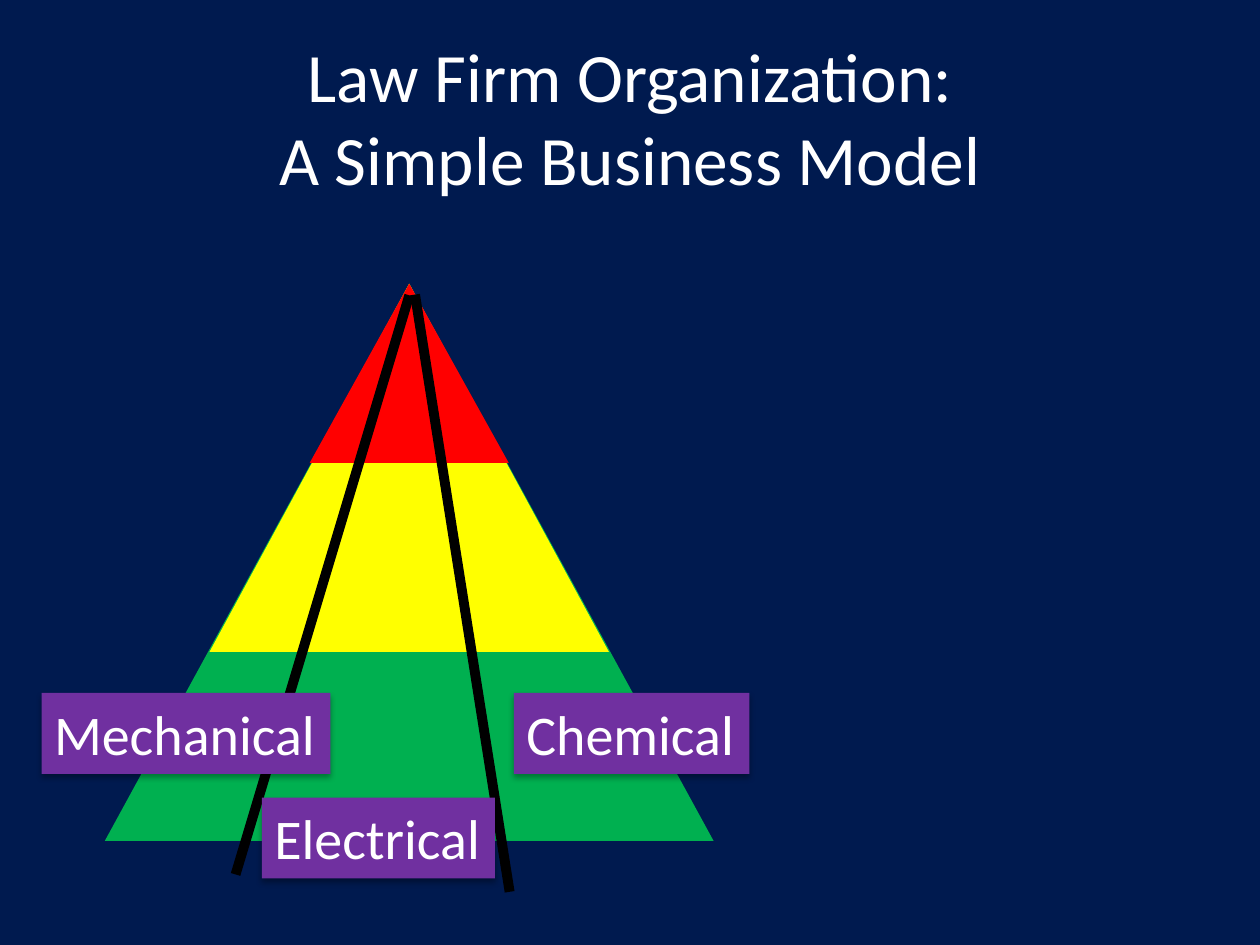
from lxml.etree import SubElement
from pptx import Presentation
from pptx.dml.color import RGBColor
from pptx.enum.shapes import MSO_SHAPE
from pptx.enum.text import MSO_ANCHOR, MSO_AUTO_SIZE, PP_ALIGN
from pptx.oxml.ns import qn
from pptx.util import Cm, Pt

COLORS = {
    "navy": "001A4F", "white": "FFFFFF", "black": "000000",
    "green": "00B050", "yellow": "FFFF00", "red": "FF0000", "purple": "7030A0",
}


def rgb(name):
    return RGBColor.from_string(COLORS[name])


class SlideBuilder:
    font = "Calibri"

    def __init__(self, prs):
        self.s = prs.slides.add_slide(prs.slide_layouts[5])
        fill = self.s.background.fill
        fill.solid()
        fill.fore_color.rgb = rgb("navy")

    def run(self, p, text, size):
        r = p.add_run()
        r.text = text
        r.font.name = self.font
        r.font.size = Pt(size)
        r.font.color.rgb = rgb("white")

    def title(self, lines, x, y, w, h):
        sp = self.s.shapes.title
        sp.left, sp.top, sp.width, sp.height = Cm(x), Cm(y), Cm(w), Cm(h)
        tf = sp.text_frame
        tf.auto_size = MSO_AUTO_SIZE.NONE
        tf.vertical_anchor = MSO_ANCHOR.MIDDLE
        p = tf.paragraphs[0]
        p.alignment = PP_ALIGN.CENTER
        for i, line in enumerate(lines):
            if i:
                p.add_line_break()
            self.run(p, line, 39.6)

    def shape(self, kind, x, y, w, h, color):
        sp = self.s.shapes.add_shape(kind, Cm(x), Cm(y), Cm(w), Cm(h))
        sp.shadow.inherit = False
        sp.fill.solid()
        sp.fill.fore_color.rgb = rgb(color)
        sp.line.fill.background()
        return sp

    def tier(self, apex_x, top, w, h, color):
        self.shape(MSO_SHAPE.ISOSCELES_TRIANGLE, apex_x - w / 2, top, w, h, color)

    def divider(self, center_x, center_y, angle, length=12.19, thickness=0.2):
        sp = self.shape(MSO_SHAPE.RECTANGLE, center_x - length / 2,
                        center_y - thickness / 2, length, thickness, "black")
        sp.rotation = angle

    def label(self, text, x, y, w, h=1.63):
        sp = self.shape(MSO_SHAPE.RECTANGLE, x, y, w, h, "purple")
        self.drop_shadow(sp)
        tf = sp.text_frame
        tf.word_wrap = False
        tf.auto_size = MSO_AUTO_SIZE.SHAPE_TO_FIT_TEXT
        tf.vertical_anchor = MSO_ANCHOR.TOP
        p = tf.paragraphs[0]
        p.alignment = PP_ALIGN.LEFT
        self.run(p, text, 32)

    def drop_shadow(self, sp):
        effects = sp._element.spPr.find(qn("a:effectLst"))
        shadow = SubElement(effects, qn("a:outerShdw"), blurRad=str(Pt(3.5)),
                            dist=str(Pt(2.2)), dir="5400000", rotWithShape="0")
        color = SubElement(shadow, qn("a:srgbClr"), val=COLORS["black"])
        SubElement(color, qn("a:alpha"), val="32000")


def main():
    prs = Presentation()
    prs.slide_width, prs.slide_height = Cm(25.4), Cm(19.05)
    b = SlideBuilder(prs)

    # Title
    b.title(["Law Firm Organization:", "A Simple Business Model"], 1.27, 0.76, 22.86, 3.18)

    # Pyramid: nested triangles sharing one apex
    for w, h, color in [(12.27, 11.23, "green"), (8.05, 7.42, "yellow"), (4.01, 3.61, "red")]:
        b.tier(8.25, 5.72, w, h, color)

    # Dividers between practice groups
    b.divider(6.5, 11.79, 106.7)
    b.divider(9.32, 11.96, 81)

    # Practice group labels
    b.label("Chemical", 10.36, 13.97, 4.75)
    b.label("Mechanical", 0.84, 13.97, 5.82)
    b.label("Electrical", 5.28, 16.08, 4.7)

    prs.save("out.pptx")


if __name__ == "__main__":
    main()
